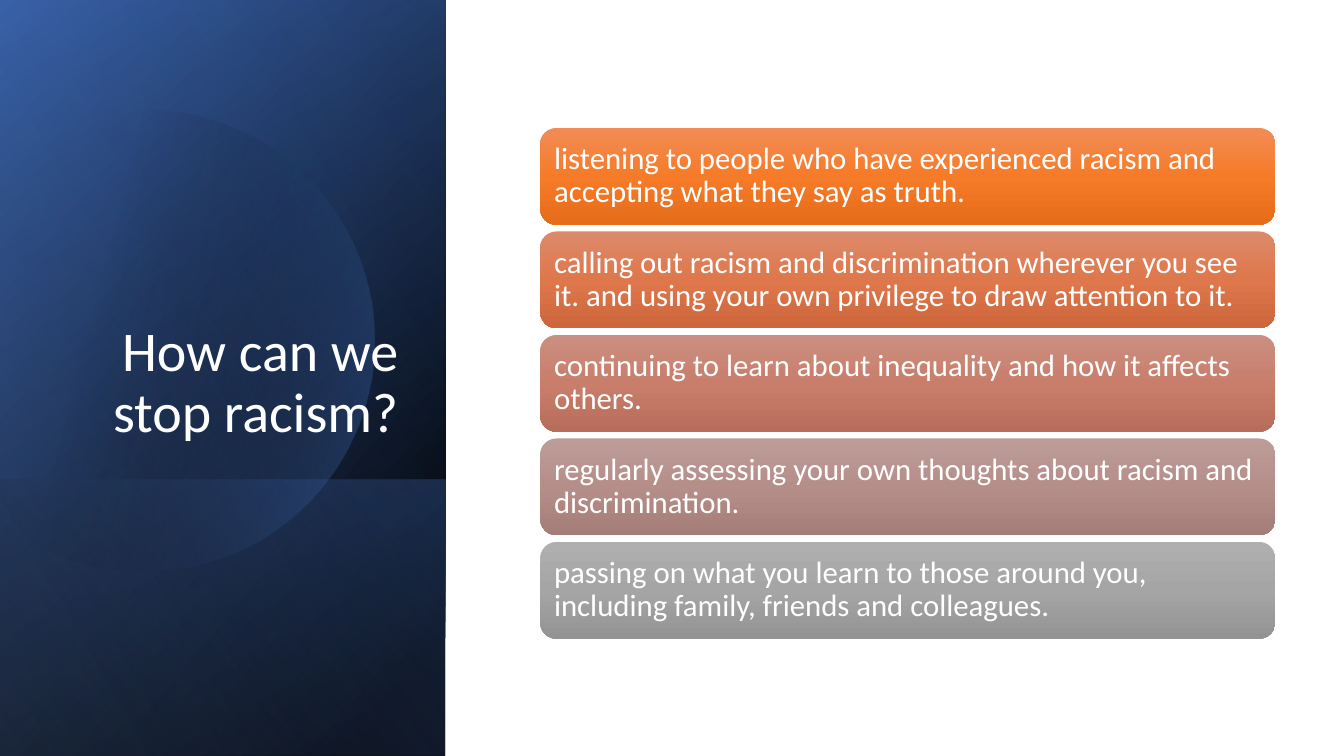
"""Builds a slide with a dark title panel and five gradient cards on stopping racism."""
from math import acos, cos, sin

from lxml import etree
from pptx import Presentation
from pptx.dml.color import RGBColor
from pptx.enum.shapes import MSO_SHAPE
from pptx.enum.text import MSO_ANCHOR, MSO_AUTO_SIZE, PP_ALIGN
from pptx.oxml.ns import qn
from pptx.util import Inches, Pt

RECTANGLE = MSO_SHAPE.RECTANGLE
ROUNDED = MSO_SHAPE.ROUNDED_RECTANGLE
MIDDLE, BOTTOM = MSO_ANCHOR.MIDDLE, MSO_ANCHOR.BOTTOM
LEFT, RIGHT = PP_ALIGN.LEFT, PP_ALIGN.RIGHT
NO_AUTOFIT = MSO_AUTO_SIZE.NONE

COLORS = {
    "black": "000000", "white": "FFFFFF",
    "navy": "2F5597", "blue": "4472C4", "sky": "8FAADC",
}

PANEL_WIDTH = 33.15
PANELS = [
    (0, [(8, "black", 100), (100, "navy", 100)], 50),
    (0, [(0, "black", 0), (99, "blue", 46)], 30),
    (63.47, [(2, "blue", 29), (100, "black", 30)], 130),
]
GLOW = [(29, "black", 0), (100, "blue", 43)]
SHEEN = (0, [(0, "black", 0), (99, "sky", 11)], 120)

CARD_TOP, CARD_PITCH, CARD_HEIGHT = 16.93, 13.69, 12.8
CARDS = [
    ("listening to people who have experienced racism and accepting what they say as truth.",
     ("F18C57", "F67B28", "E56C19")),
    ("calling out racism and discrimination wherever you see it. "
     "and using your own privilege to draw attention to it.",
     ("DD8A6A", "DE774B", "CD673B")),
    ("continuing to learn about inequality and how it affects others.",
     ("CB8F81", "C97E6B", "B76D5B")),
    ("regularly assessing your own thoughts about racism and discrimination.",
     ("BC9C99", "B68E89", "A47C78")),
    ("passing on what you learn to those around you, including family, friends and colleagues.",
     ("AFAFAF", "A5A5A5", "939393")),
]


class SlideBuilder:
    """Draws styled elements placed in percent of the slide's size."""

    def __init__(self, deck, font="Calibri"):
        self.deck = deck
        self.font = font
        self.slide = deck.slides.add_slide(deck.slide_layouts[5])
        self.shapes = self.slide.shapes

    def across(self, percent):
        return int(self.deck.slide_width * percent / 100)

    def down(self, percent):
        return int(self.deck.slide_height * percent / 100)

    def box(self, left, top, width, height):
        return self.across(left), self.down(top), self.across(width), self.down(height)

    def paint(self, shape, stops, angle):
        shape.shadow.inherit = False
        shape.line.fill.background()
        shape.fill.gradient()
        gradient = shape._element.spPr.find(qn("a:gradFill"))
        stop_list = gradient.find(qn("a:gsLst"))
        for default_stop in list(stop_list):
            stop_list.remove(default_stop)
        for position, color, opacity in stops:
            stop = etree.SubElement(stop_list, qn("a:gs"), pos=str(position * 1000))
            tint = etree.SubElement(stop, qn("a:srgbClr"), val=COLORS.get(color, color))
            if opacity < 100:
                etree.SubElement(tint, qn("a:alpha"), val=str(opacity * 1000))
        gradient.find(qn("a:lin")).set("ang", str(angle * 60000))

    def set_text(self, shape, text, size, align, anchor):
        frame = shape.text_frame
        frame.text = text
        frame.word_wrap = True
        frame.auto_size = NO_AUTOFIT
        frame.vertical_anchor = anchor
        paragraph = frame.paragraphs[0]
        paragraph.alignment = align
        paragraph.line_spacing = 0.9
        font = paragraph.runs[0].font
        font.name, font.size = self.font, Pt(size)
        font.color.rgb = RGBColor.from_string(COLORS["white"])
        return frame

    def panel(self, top, stops, angle):
        left, top, width, height = self.box(0, top, PANEL_WIDTH, 100 - top)
        shift = (width - height) // 2
        panel = self.shapes.add_shape(RECTANGLE, left + shift, top - shift, height, width)
        panel.rotation = 90
        panel._element.spPr.xfrm.set("flipH", "1")
        self.paint(panel, stops, angle)

    def cut_circle(self, center_x, center_y, radius, stops, angle, steps=120):
        x, y, r = self.across(center_x), self.down(center_y), self.across(radius)
        reach = acos(-x / r)
        turns = [reach * (2 * step / steps - 1) for step in range(steps + 1)]
        rim = [(int(x + r * cos(turn)), int(y + r * sin(turn))) for turn in turns]
        outline = self.shapes.build_freeform(*rim[0])
        outline.add_line_segments(rim[1:], close=True)
        self.paint(outline.convert_to_shape(), stops, angle)

    def title(self, text, *area):
        title = self.shapes.title
        title.left, title.top, title.width, title.height = self.box(*area)
        self.set_text(title, text, 40, RIGHT, BOTTOM)
        title._element.getparent().append(title._element)

    def card(self, text, shades, top):
        card = self.shapes.add_shape(ROUNDED, *self.box(40.2, top, 54.7, CARD_HEIGHT))
        self.paint(card, [(50 * i, shade, 100) for i, shade in enumerate(shades)], 90)
        frame = self.set_text(card, text, 22, LEFT, MIDDLE)
        frame.margin_left = frame.margin_right = Inches(0.09)


def main():
    deck = Presentation()
    deck.slide_width, deck.slide_height = Inches(13.33), Inches(7.5)
    builder = SlideBuilder(deck)
    for panel in PANELS:
        builder.panel(*panel)
    builder.cut_circle(10.7, 45.07, 17.18, GLOW, 14)
    builder.panel(*SHEEN)
    builder.title("How can we stop racism?", 4.8, 24.53, 25.58, 34.93)
    for row, (text, shades) in enumerate(CARDS):
        builder.card(text, shades, CARD_TOP + row * CARD_PITCH)
    deck.save("out.pptx")


if __name__ == "__main__":
    main()
